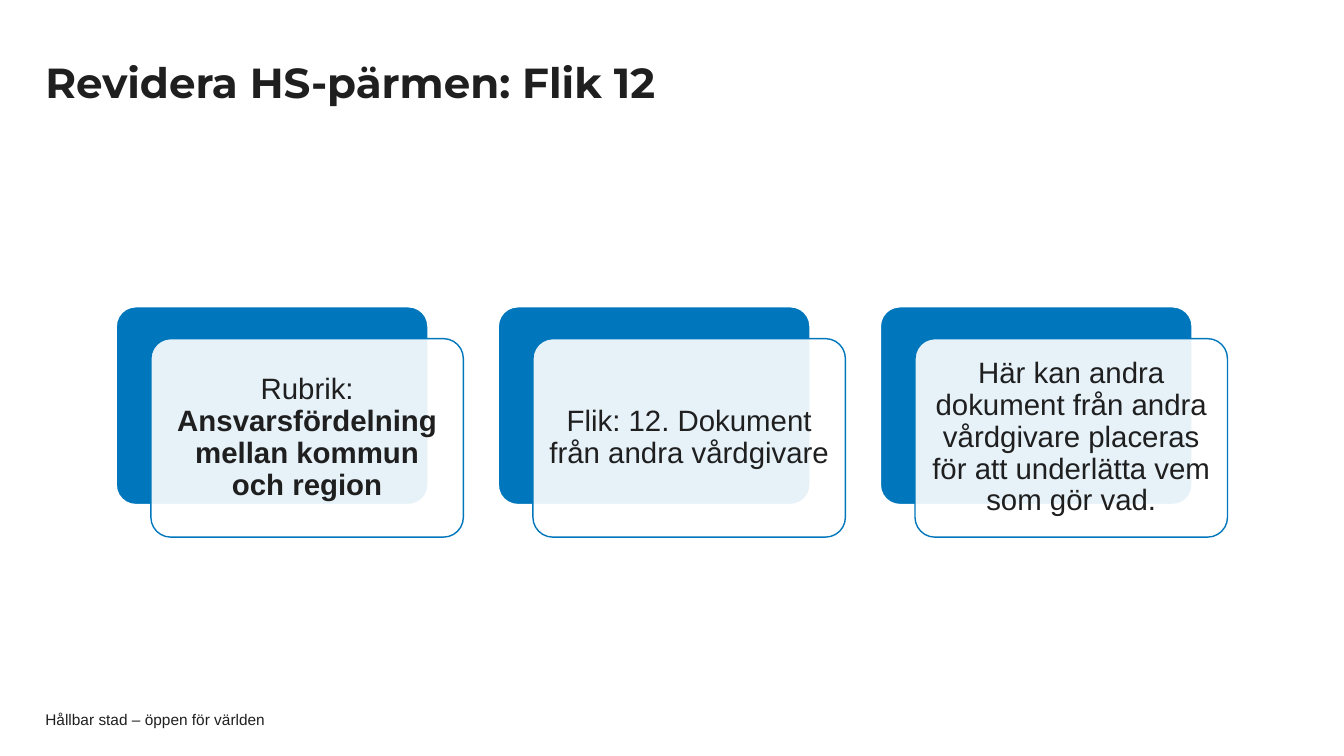
from dataclasses import dataclass

from lxml.etree import SubElement
from pptx import Presentation
from pptx.dml.color import RGBColor
from pptx.enum.shapes import MSO_SHAPE
from pptx.enum.text import MSO_ANCHOR, PP_ALIGN
from pptx.oxml.ns import qn
from pptx.shapes.autoshape import Shape
from pptx.slide import Slide
from pptx.util import Pt

COLORS = {"text": "1F1F1F", "blue": "0077BC", "white": "FFFFFF"}

CARD_LEFT, CARD_TOP = 82.8, 218.9
CARD_WIDTH, CARD_HEIGHT = 223.2, 141.8
CARD_PITCH = 272.9
FRONT_SHIFT_X, FRONT_SHIFT_Y = 25, 23


@dataclass(frozen=True)
class Card:
    lead: str
    emphasis: str = ""


CARDS = [
    Card("Rubrik: ", "Ansvarsfördelning mellan kommun och region"),
    Card("Flik: 12. Dokument från andra vårdgivare"),
    Card("Här kan andra dokument från andra vårdgivare placeras för att underlätta vem som gör vad."),
]


def color(name: str) -> RGBColor:
    return RGBColor.from_string(COLORS[name])


def write_text(shape: Shape, text: str, *, size: float, font: str = "Arial",
               bold: bool = False, bold_tail: str = "",
               align: PP_ALIGN = PP_ALIGN.LEFT, line_spacing: float = 1.0,
               inset_x: float = 0, inset_y: float = 0) -> None:
    frame = shape.text_frame
    frame.word_wrap = True
    frame.vertical_anchor = MSO_ANCHOR.MIDDLE
    frame.margin_left = frame.margin_right = Pt(inset_x)
    frame.margin_top = frame.margin_bottom = Pt(inset_y)
    paragraph = frame.paragraphs[0]
    paragraph.alignment = align
    paragraph.line_spacing = line_spacing
    for content, is_bold in ((text, bold), (bold_tail, True)):
        if content:
            run = paragraph.add_run()
            run.text = content
            run.font.name = font
            run.font.size = Pt(size)
            run.font.bold = is_bold
            run.font.color.rgb = color("text")


def add_panel(slide: Slide, left: float, top: float, *, fill: str, line: str,
              line_width: float, opacity: int = 100) -> Shape:
    shape = slide.shapes.add_shape(MSO_SHAPE.ROUNDED_RECTANGLE, Pt(left), Pt(top),
                                   Pt(CARD_WIDTH), Pt(CARD_HEIGHT))
    shape.adjustments[0] = 0.1
    shape.shadow.inherit = False
    shape.fill.solid()
    shape.fill.fore_color.rgb = color(fill)
    shape.line.color.rgb = color(line)
    shape.line.width = Pt(line_width)
    if opacity < 100:
        fill_color = shape.fill._xPr.find(qn("a:solidFill")).find(qn("a:srgbClr"))
        SubElement(fill_color, qn("a:alpha")).set("val", str(opacity * 1000))
    return shape


def add_card(slide: Slide, card: Card, left: float) -> None:
    add_panel(slide, left, CARD_TOP, fill="blue", line="white", line_width=1.5)
    front = add_panel(slide, left + FRONT_SHIFT_X, CARD_TOP + FRONT_SHIFT_Y,
                      fill="white", line="blue", line_width=1, opacity=90)
    write_text(front, card.lead, bold_tail=card.emphasis, size=21,
               align=PP_ALIGN.CENTER, line_spacing=0.9, inset_x=6.5, inset_y=6.5)


def main() -> None:
    presentation = Presentation()
    presentation.slide_width, presentation.slide_height = Pt(960), Pt(540)
    slide = presentation.slides.add_slide(presentation.slide_layouts[6])

    footer = slide.shapes.add_textbox(Pt(32.4), Pt(508.3), Pt(680.4), Pt(11.5))
    write_text(footer, "Hållbar stad – öppen för världen", size=11)

    title = slide.shapes.add_textbox(Pt(32.4), Pt(31.7), Pt(722.2), Pt(58.3))
    write_text(title, "Revidera HS-pärmen: Flik 12", size=30, font="Montserrat",
               bold=True, line_spacing=0.9, inset_y=3.6)

    for index, card in enumerate(CARDS):
        add_card(slide, card, CARD_LEFT + index * CARD_PITCH)

    presentation.save("out.pptx")


if __name__ == "__main__":
    main()
